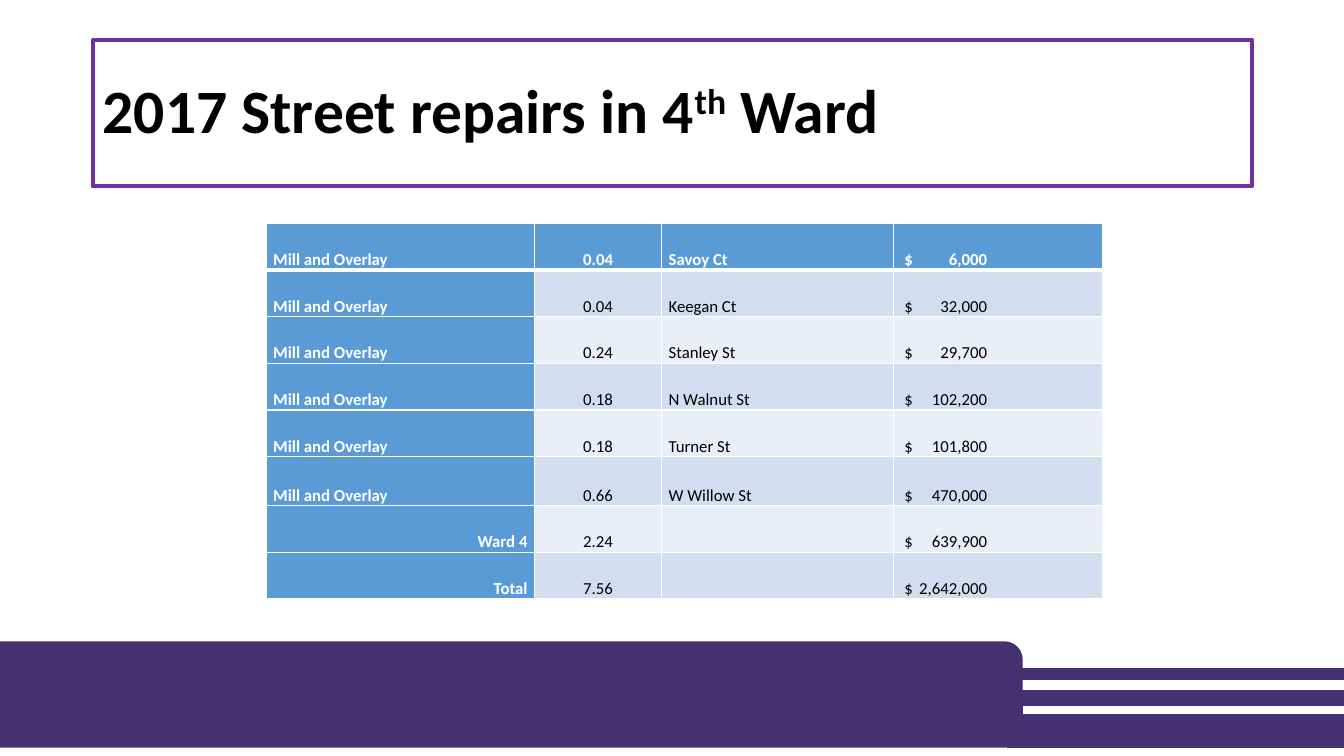
from typing import NamedTuple

from lxml.etree import SubElement
from pptx import Presentation
from pptx.dml.color import RGBColor
from pptx.enum.shapes import MSO_SHAPE as Geom
from pptx.enum.text import MSO_ANCHOR as Anchor, PP_ALIGN as Align
from pptx.oxml.ns import qn
from pptx.util import Emu, Inches, Pt

WHITE = RGBColor(0xFF, 0xFF, 0xFF)
BLACK = RGBColor(0x00, 0x00, 0x00)
PLUM = RGBColor(0x45, 0x30, 0x72)
VIOLET = RGBColor(0x70, 0x30, 0xA0)
BLUE = RGBColor(0x5B, 0x9B, 0xD5)
PALE = RGBColor(0xD2, 0xDE, 0xEF)
LIGHT = RGBColor(0xEA, 0xEF, 0xF7)

FONT = "Calibri"
WIDE, HIGH = Inches(13.33), Inches(7.5)


class Box(NamedTuple):
    """Place and size in percent of the slide."""
    left: float
    top: float
    width: float
    height: float


class Bar(NamedTuple):
    geom: Geom
    box: Box


class Work(NamedTuple):
    kind: str
    miles: str
    street: str
    cost: str
    side: Align = Align.LEFT
    height: float = 6.16


BARS = [
    Bar(Geom.ROUNDED_RECTANGLE, Box(-1.35, 84.93, 77.4, 13.87)),
    Bar(Geom.RECTANGLE, Box(74.92, 88.4, 26.48, 1.47)),
    Bar(Geom.RECTANGLE, Box(76.05, 91.33, 26.48, 2)),
    Bar(Geom.RECTANGLE, Box(74.92, 94.53, 26.48, 4.27)),
]
HEAD = Box(6.9, 5.33, 86.25, 19.33)
GRID = Box(19.8, 29.6, 62.2, 49.4)
COLS = [19.98, 9.45, 17.25, 15.53]
MILL = "Mill and Overlay"
WORKS = [
    Work(MILL, "0.04", "Savoy Ct", "6,000"),
    Work(MILL, "0.04", "Keegan Ct", "32,000"),
    Work(MILL, "0.24", "Stanley St", "29,700"),
    Work(MILL, "0.18", "N Walnut St", "102,200"),
    Work(MILL, "0.18", "Turner St", "101,800"),
    Work(MILL, "0.66", "W Willow St", "470,000", height=6.5),
    Work("Ward 4", "2.24", "", "639,900", Align.RIGHT),
    Work("Total", "7.56", "", "2,642,000", Align.RIGHT),
]


def across(share: float) -> Emu:
    return Emu(round(WIDE * share / 100))


def down(share: float) -> Emu:
    return Emu(round(HIGH * share / 100))


def place(box: Box) -> tuple[Emu, Emu, Emu, Emu]:
    return across(box.left), down(box.top), across(box.width), down(box.height)


def draw_bar(slide, bar: Bar) -> None:
    shape = slide.shapes.add_shape(bar.geom, *place(bar.box))
    shape.shadow.inherit = False
    shape.fill.solid()
    shape.fill.fore_color.rgb = PLUM
    shape.line.color.rgb = PLUM
    shape.line.width = Pt(1)


def draw_title(slide) -> None:
    title = slide.shapes.title
    title.left, title.top, title.width, title.height = place(HEAD)
    title.line.color.rgb = VIOLET
    title.line.width = Pt(3)
    title.text_frame.vertical_anchor = Anchor.MIDDLE
    para = title.text_frame.paragraphs[0]
    para.alignment = Align.LEFT
    para.line_spacing = 0.9
    font = para.font
    font.name, font.size, font.bold = FONT, Pt(44), True
    font.color.rgb = BLACK
    for text, base in (("2017 Street repairs in 4", 0), ("th", 30), (" Ward", 0)):
        run = para.add_run()
        run.text = text
        if base:
            run._r.get_or_add_rPr().set("baseline", str(base * 1000))


def add_edges(cell, heavy: bool) -> None:
    """Draw white cell borders, with a thick lower one below the first row."""
    props = cell._tc.get_or_add_tcPr()
    for side in "LRTB":
        width = Pt(3) if heavy and side == "B" else Pt(1)
        edge = SubElement(props, qn(f"a:ln{side}"), w=str(width))
        fill = SubElement(edge, qn("a:solidFill"))
        SubElement(fill, qn("a:srgbClr"), val=str(WHITE))


def add_tab(para, stop: Emu) -> None:
    tabs = SubElement(para._p.get_or_add_pPr(), qn("a:tabLst"))
    SubElement(tabs, qn("a:tab"), pos=str(stop), algn="r")


def fill_cell(cell, text: str, side: Align, row: int, col: int) -> None:
    strong = row == 0 or col == 0
    add_edges(cell, row == 0)
    cell.fill.solid()
    cell.fill.fore_color.rgb = BLUE if strong else PALE if row % 2 else LIGHT
    cell.vertical_anchor = Anchor.BOTTOM
    cell.margin_left = Inches(0.11 if col == 3 else 0.07)
    cell.margin_right = Inches(0.07)
    cell.margin_top = cell.margin_bottom = 0
    para = cell.text_frame.paragraphs[0]
    para.alignment = side
    para.line_spacing = 1.07
    if col == 3:
        add_tab(para, Inches(0.82))
    font = para.font
    font.name, font.size, font.bold = FONT, Pt(12), strong
    font.color.rgb = WHITE if strong else BLACK
    if text:
        para.add_run().text = text


def draw_table(slide) -> None:
    frame = slide.shapes.add_table(len(WORKS), len(COLS), *place(GRID))
    table = frame.table
    table.first_col = True
    for col, share in zip(table.columns, COLS):
        col.width = across(share)
    for row, work in enumerate(WORKS):
        table.rows[row].height = down(work.height)
        cells = [
            (work.kind, work.side),
            (work.miles, Align.CENTER),
            (work.street, Align.LEFT),
            (f"$\t{work.cost}", Align.LEFT),
        ]
        for col, (text, side) in enumerate(cells):
            fill_cell(table.cell(row, col), text, side, row, col)


def main() -> None:
    deck = Presentation()
    deck.slide_width, deck.slide_height = WIDE, HIGH
    slide = deck.slides.add_slide(deck.slide_layouts[5])
    for bar in BARS:
        draw_bar(slide, bar)
    draw_table(slide)
    draw_title(slide)
    deck.save("out.pptx")


if __name__ == "__main__":
    main()
